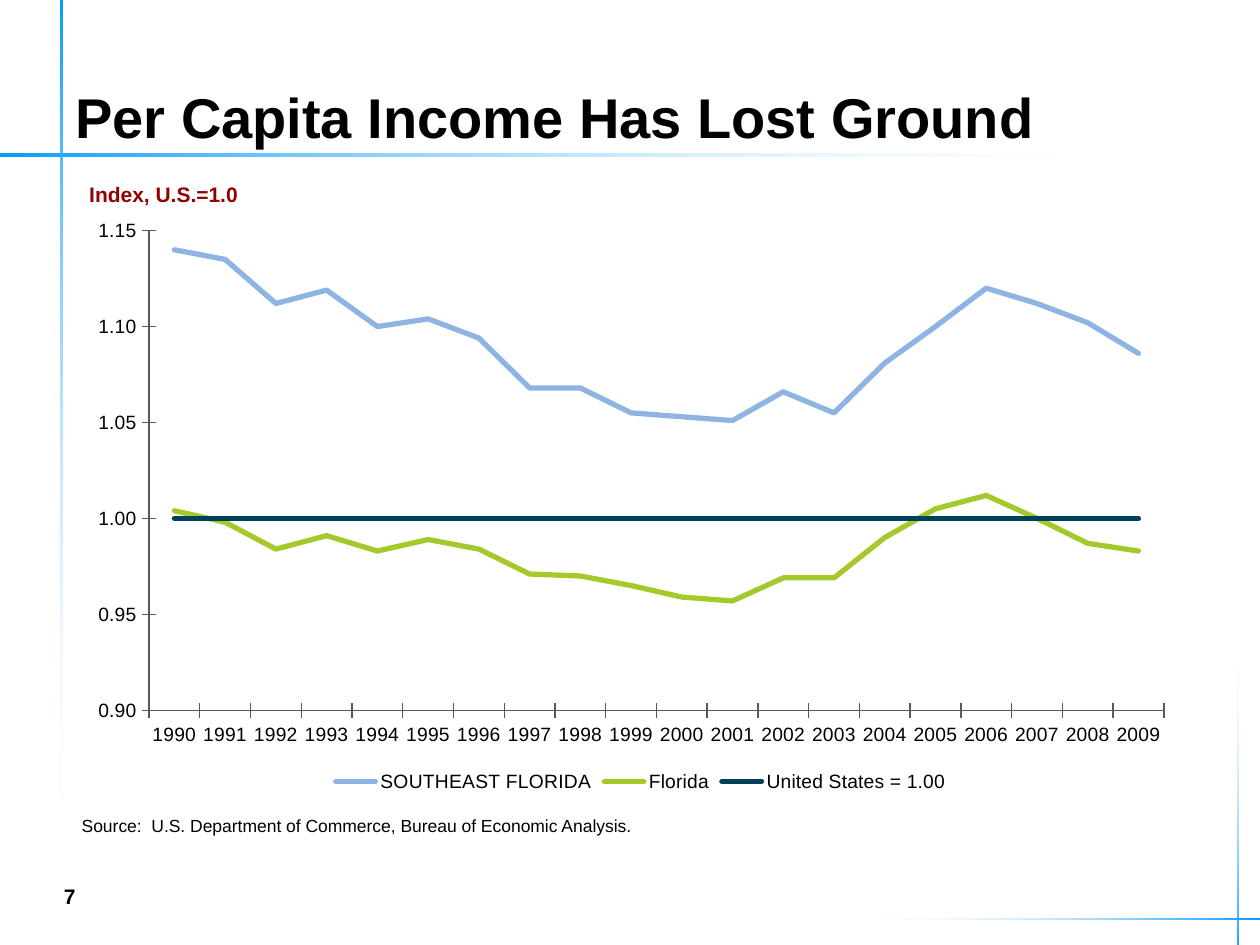
from lxml import etree
from pptx import Presentation
from pptx.chart.data import CategoryChartData
from pptx.dml.color import RGBColor
from pptx.enum.chart import XL_CHART_TYPE as CT, XL_LEGEND_POSITION as LP, XL_TICK_MARK as TM
from pptx.enum.shapes import MSO_SHAPE
from pptx.enum.text import MSO_ANCHOR as MA
from pptx.oxml import parse_xml
from pptx.oxml.ns import nsdecls, qn
from pptx.util import Inches, Pt

C = {"accent": "0099FF", "white": "FFFFFF", "text": "000000", "red": "920000",
     "axis": "595959", "southeast": "8EB4E3", "florida": "A5C92B", "us": "02405C"}
FONT = "Arial"


def rgb(name):
    return RGBColor.from_string(C[name])


prs = Presentation()
prs.slide_width, prs.slide_height = Inches(10), Inches(7.5)
s = prs.slides.add_slide(prs.slide_layouts[6])

# Fading rules: left, top, width, height, rotation
rules = [(4.52, -3.47, 0.02, 9.4, 270), (0.48, -0.09, 0.02, 7.07, 0),
         (8.38, 5.62, 0.01, 3.35, 90), (9.82, 5.04, 0.01, 2.64, 180)]
for *box, rotation in rules:
    sp = s.shapes.add_shape(MSO_SHAPE.RECTANGLE, *map(Inches, box))
    sp.rotation = rotation
    sp.shadow.inherit = False
    sp.line.fill.background()
    sp.fill.gradient()
    sp.fill.gradient_angle = 270
    for stop, position, name in zip(sp.fill.gradient_stops, (0, 1), ("accent", "white")):
        stop.position = position
        stop.color.rgb = rgb(name)
    end = sp._element.spPr.findall(".//" + qn("a:srgbClr"))[-1]
    etree.SubElement(end, qn("a:alpha")).set("val", "0")

# Title, page number, source and axis caption
texts = [
    ("Per Capita Income Has Lost Ground", (0.5, -0.01, 9, 1.25), MA.BOTTOM, 32, True, "text"),
    ("7", (0.41, 6.91, 0.73, 0.4), MA.MIDDLE, 12, True, "text"),
    ("Source:  U.S. Department of Commerce, Bureau of Economic Analysis.",
     (0.55, 6.42, 5.49, 0.27), MA.TOP, 10, False, "text"),
    ("Index, U.S.=1.0", (0.61, 1.39, 4.08, 0.3), MA.TOP, 12, True, "red"),
]
for text, box, anchor, size, bold, color in texts:
    tf = s.shapes.add_textbox(*map(Inches, box)).text_frame
    tf.word_wrap = True
    tf.vertical_anchor = anchor
    r = tf.paragraphs[0].add_run()
    r.text = text
    for key, value in {"name": FONT, "size": Pt(size), "bold": bold}.items():
        setattr(r.font, key, value)
    r.font.color.rgb = rgb(color)

# Chart data
series = [
    ("SOUTHEAST FLORIDA", "southeast",
     [1.14, 1.135, 1.112, 1.119, 1.1, 1.104, 1.094, 1.068, 1.068, 1.055,
      1.053, 1.051, 1.066, 1.055, 1.081, 1.1, 1.12, 1.112, 1.102, 1.086]),
    ("Florida", "florida",
     [1.004, 0.998, 0.984, 0.991, 0.983, 0.989, 0.984, 0.971, 0.97, 0.965,
      0.959, 0.957, 0.969, 0.969, 0.99, 1.005, 1.012, 1, 0.987, 0.983]),
    ("United States = 1.00", "us", [1] * 20),
]
data = CategoryChartData()
data.categories = [str(year) for year in range(1990, 2010)]
for name, _, values in series:
    data.add_series(name, values)

# Line chart
box = map(Inches, (0.61, 1.72, 8.95, 4.61))
chart = s.shapes.add_chart(CT.LINE, *box, data).chart
chart.has_title = False
chart.font.name, chart.font.size = FONT, Pt(11)
chart.font.color.rgb = rgb("text")
chart.has_legend = True
chart.legend.position = LP.BOTTOM
chart.legend.include_in_layout = False
plot = chart.plots[0]
plot.vary_by_categories = False
for ser, (_, color, _) in zip(plot.series, series):
    ser.smooth = False
    ser.format.line.color.rgb = rgb(color)
    ser.format.line.width = Pt(3)
    ser.format.line._ln.set("cap", "rnd")

# Axes
for axis in (chart.category_axis, chart.value_axis):
    axis.has_major_gridlines = False
    axis.major_tick_mark, axis.minor_tick_mark = TM.CROSS, TM.NONE
    axis.format.line.color.rgb = rgb("axis")
    axis.format.line.width = Pt(0.75)
scale = {"minimum_scale": 0.9, "maximum_scale": 1.15, "major_unit": 0.05}
for key, value in scale.items():
    setattr(chart.value_axis, key, value)
labels = chart.value_axis.tick_labels
labels.number_format, labels.number_format_is_linked = "#,##0.00", False

# Fixed inner plot area
area = chart._chartSpace.chart.plotArea
for old in area.findall(qn("c:layout")):
    area.remove(old)
parts = [("layoutTarget", "inner"), ("xMode", "edge"), ("yMode", "edge"),
         ("x", 0.064), ("y", 0.024), ("w", 0.9), ("h", 0.826)]
inner = "".join(f'<c:{tag} val="{value}"/>' for tag, value in parts)
area.insert(0, parse_xml(
    f'<c:layout {nsdecls("c")}><c:manualLayout>{inner}</c:manualLayout></c:layout>'))

prs.save("out.pptx")
